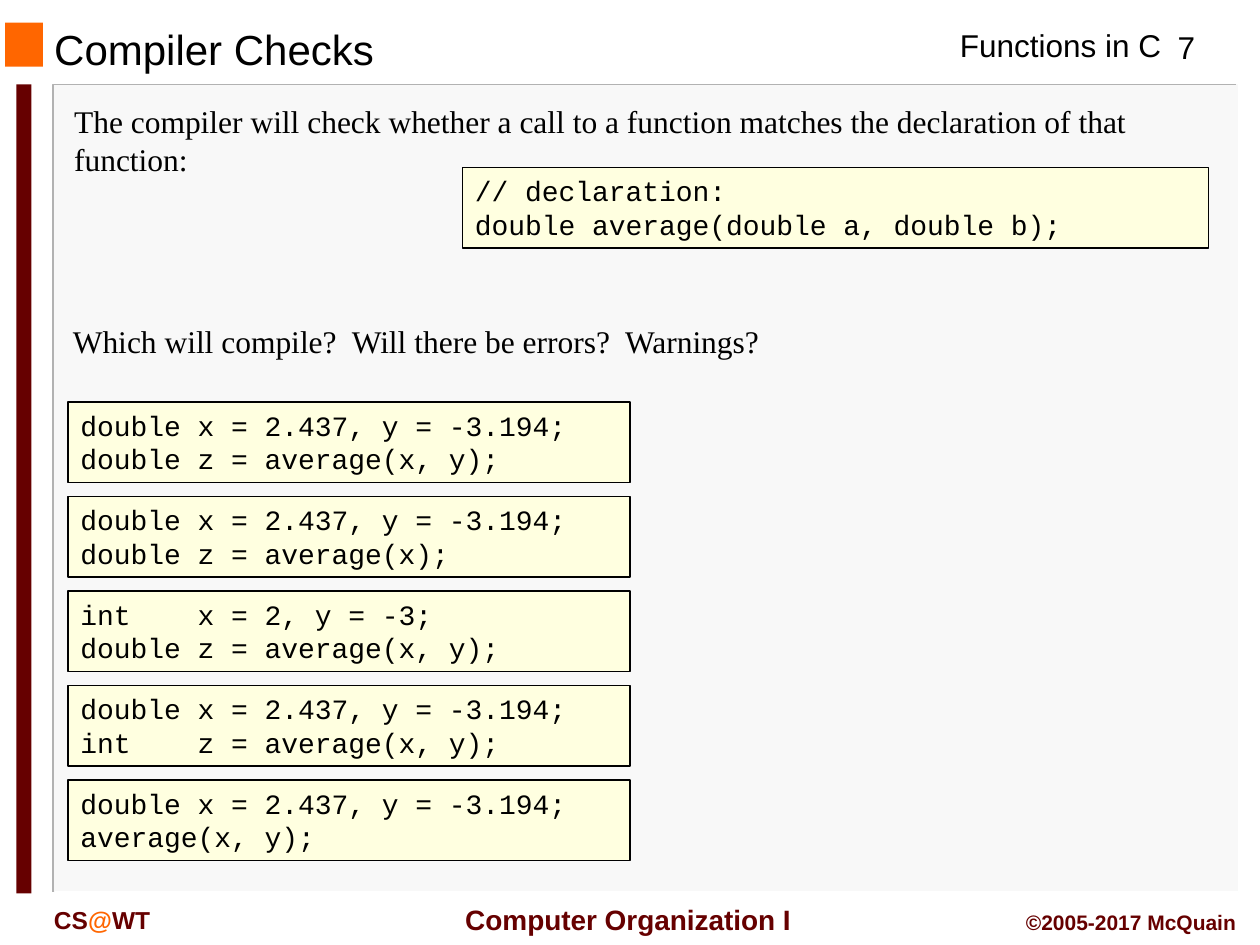
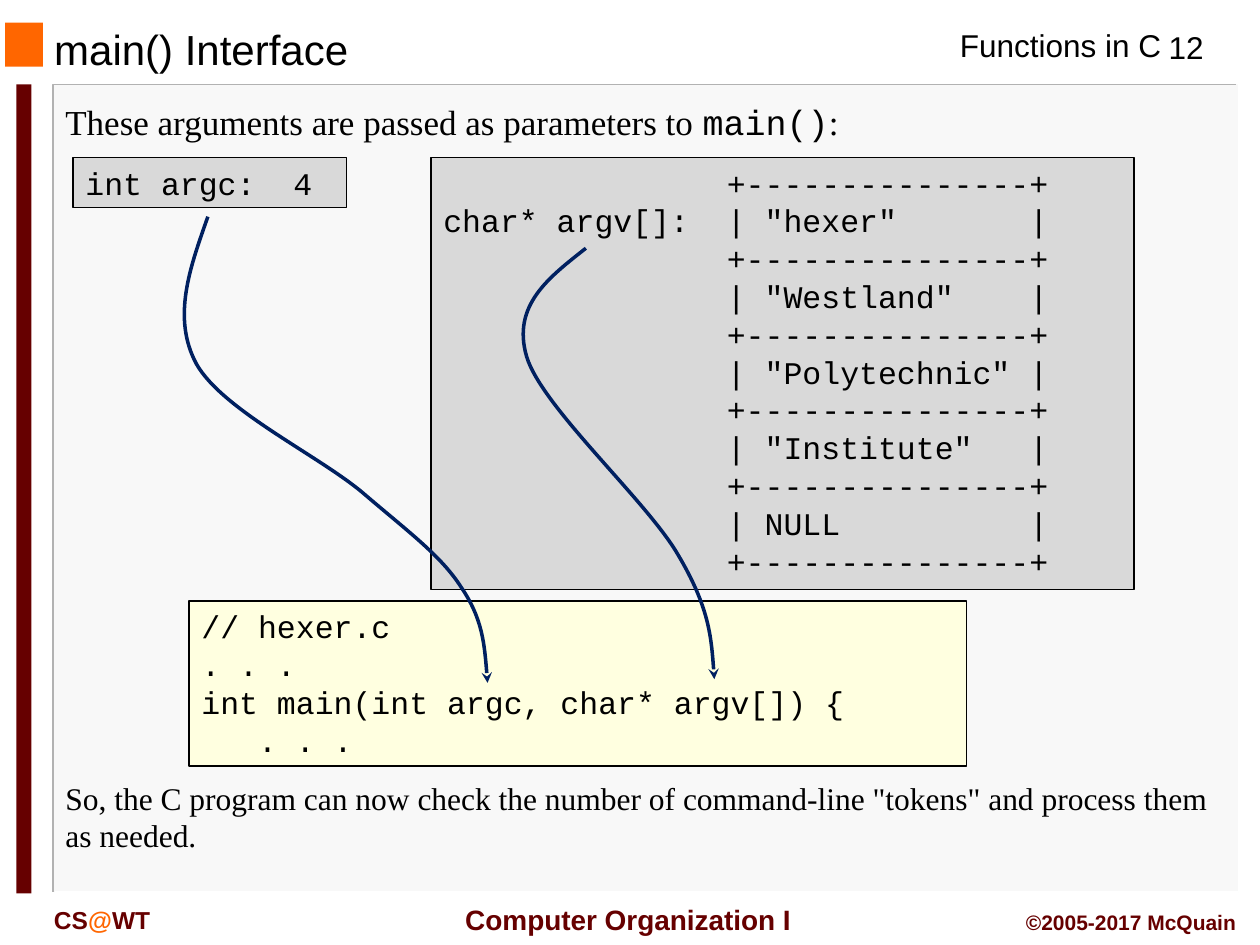
from pptx import Presentation
from pptx.dml.color import RGBColor
from pptx.enum.shapes import MSO_SHAPE
from pptx.enum.text import MSO_ANCHOR as Anchor, MSO_AUTO_SIZE as AutoSize, PP_ALIGN as Align
from pptx.oxml.xmlchemy import OxmlElement
from pptx.util import Inches, Pt

BLACK = RGBColor(0x00, 0x00, 0x00)
WHITE = RGBColor(0xFF, 0xFF, 0xFF)
PANEL = RGBColor(0xF8, 0xF8, 0xF8)
PANEL_EDGE = RGBColor(0xB2, 0xB2, 0xB2)
ORANGE = RGBColor(0xFF, 0x66, 0x00)
MAROON = RGBColor(0x66, 0x00, 0x00)
CODE_YELLOW = RGBColor(0xFF, 0xFF, 0xE0)
DATA_GRAY = RGBColor(0xD9, 0xD9, 0xD9)
ARROW_NAVY = RGBColor(0x00, 0x20, 0x60)

SANS, SERIF, MONO = "Arial", "Times New Roman", "Courier New"
TITLE_ONLY = 5

HEADING = {"name": SANS, "size": Pt(24), "bold": False}
HEADER = {"name": SANS, "size": Pt(18)}
COURSE = {"name": SANS, "size": Pt(16), "bold": True}
DEPARTMENT = {"name": SANS, "size": Pt(14), "bold": True}
COPYRIGHT = {"name": SANS, "size": Pt(12), "bold": True}
PROSE = {"name": SERIF, "size": Pt(18)}
LEAD = {"name": SERIF, "size": Pt(20)}
LEAD_CODE = {"name": MONO, "size": Pt(20)}
CODE = {"name": MONO, "size": Pt(18)}
SMALL_CODE = {"name": MONO, "size": Pt(16)}


def apply_format(target, values):
    for key, value in values.items():
        setattr(target, key, value)


def place(left, top, width, height):
    return [Inches(n) for n in (left, top, width, height)]


def write_runs(paragraph, runs, align=Align.LEFT):
    paragraph.alignment = align
    for text, style, color in runs:
        run = paragraph.add_run()
        run.text = text
        apply_format(run.font, style)
        run.font.color.rgb = color


def add_label(slide, box, runs, align=Align.LEFT, **frame_format):
    frame = slide.shapes.add_textbox(*place(*box)).text_frame
    apply_format(frame, {"word_wrap": True, **frame_format})
    write_runs(frame.paragraphs[0], runs, align)


def add_block(slide, box, fill):
    block = slide.shapes.add_shape(MSO_SHAPE.RECTANGLE, *place(*box))
    block.shadow.inherit = False
    block.fill.solid()
    block.fill.fore_color.rgb = fill
    block.line.fill.background()
    return block


def add_code(slide, box, lines, style=CODE, fill=CODE_YELLOW):
    block = add_block(slide, box, fill)
    block.line.color.rgb = BLACK
    block.line.width = Pt(0.75)
    frame = block.text_frame
    apply_format(frame, {"word_wrap": True, "vertical_anchor": Anchor.TOP})
    for index, line in enumerate(lines):
        paragraph = frame.add_paragraph() if index else frame.paragraphs[0]
        write_runs(paragraph, [(line, style, BLACK)])


def add_polyline(slide, points, color, width):
    start, *rest = [(Inches(x), Inches(y)) for x, y in points]
    builder = slide.shapes.build_freeform(*start)
    builder.add_line_segments(rest, close=False)
    outline = builder.convert_to_shape()
    outline.shadow.inherit = False
    outline.fill.background()
    outline.line.color.rgb = color
    outline.line.width = Pt(width)
    return outline


def add_curved_arrow(slide, points):
    arrow = add_polyline(slide, points, ARROW_NAVY, 2)
    segments = arrow.element.xpath(".//a:lnTo")
    for first in range(0, len(segments), 3):
        curve = OxmlElement("a:cubicBezTo")
        segments[first].addprevious(curve)
        for segment in segments[first:first + 3]:
            curve.append(segment[0])
            segment.getparent().remove(segment)
    head = OxmlElement("a:tailEnd")
    head.set("type", "stealth")
    arrow.element.xpath(".//a:ln")[0].append(head)


def add_framed_slide(deck, heading, number):
    slide = deck.slides.add_slide(deck.slide_layouts[TITLE_ONLY])
    title = slide.shapes.title
    position = place(0.33, 0.19, 7.08, 0.39)
    apply_format(title, dict(zip(("left", "top", "width", "height"), position)))
    apply_format(title.text_frame, {"auto_size": AutoSize.NONE, "word_wrap": True,
                                    "vertical_anchor": Anchor.MIDDLE})
    write_runs(title.text_frame.paragraphs[0], [(heading, HEADING, BLACK)])

    add_block(slide, (0.43, 0.67, 9.4, 6.41), PANEL)
    add_polyline(slide, [(9.81, 0.67), (0.42, 0.67), (0.42, 7.08)], PANEL_EDGE, 1)
    add_polyline(slide, [(9.83, 0.67), (9.83, 7.08), (0.44, 7.08)], WHITE, 1)
    add_block(slide, (0.04, 0.18, 0.3, 0.35), ORANGE)
    add_block(slide, (0.13, 0.67, 0.12, 6.42), MAROON)

    add_label(slide, (7.52, 0.16, 1.82, 0.4), [("Functions in C", HEADER, BLACK)],
              word_wrap=False)
    add_label(slide, (9.08, 0.17, 0.67, 0.4), [(number, HEADER, BLACK)], Align.CENTER)
    add_label(slide, (3.5, 7.11, 2.91, 0.37),
              [(" Computer Organization I", COURSE, MAROON)], Align.CENTER,
              word_wrap=False, vertical_anchor=Anchor.MIDDLE)
    add_label(slide, (0.33, 7.13, 1.5, 0.33),
              [("CS", DEPARTMENT, MAROON), ("@", DEPARTMENT, ORANGE),
               ("WT", DEPARTMENT, MAROON)])
    add_label(slide, (7.83, 7.17, 2.08, 0.3),
              [("©2005-2017 McQuain", COPYRIGHT, MAROON)], Align.RIGHT)
    return slide


def argv_diagram(tokens):
    border = " " * 15 + "+" + "-" * 15 + "+"
    lines = [border]
    for index, token in enumerate(tokens):
        label = "" if index else "char* argv[]:"
        lines += [f"{label:<15}| {token:<14}|", border]
    return lines


def build_compiler_checks(deck):
    slide = add_framed_slide(deck, "Compiler Checks", "7")
    add_label(slide, (0.49, 0.76, 9.27, 0.71),
              [("The compiler will check whether a call to a function matches "
                "the declaration of that function:", PROSE, BLACK)])
    add_code(slide, (3.67, 1.33, 5.92, 0.64),
             ["// declaration:", "double average(double a, double b);"], SMALL_CODE)
    add_label(slide, (0.48, 2.51, 6.1, 0.4),
              [("Which will compile?  Will there be errors?  Warnings?", PROSE, BLACK)])

    doubles = "double x = 2.437, y = -3.194;"
    calls = [
        (doubles, "double z = average(x, y);"),
        (doubles, "double z = average(x);"),
        ("int    x = 2, y = -3;", "double z = average(x, y);"),
        (doubles, "int    z = average(x, y);"),
        (doubles, "average(x, y);"),
    ]
    for row, call in enumerate(calls):
        add_code(slide, (0.54, 3.19 + 0.75 * row, 4.46, 0.64), call, SMALL_CODE)


def build_main_interface(deck):
    slide = add_framed_slide(deck, "main() Interface", "12")
    tokens = ['"hexer"', '"Westland"', '"Polytechnic"', '"Institute"', "NULL"]
    add_code(slide, (3.42, 1.25, 5.58, 3.43), argv_diagram(tokens), fill=DATA_GRAY)
    add_label(slide, (0.42, 0.75, 9.42, 0.44),
              [("These arguments are passed as parameters to ", LEAD, BLACK),
               ("main()", LEAD_CODE, BLACK), (":", LEAD, BLACK)])
    add_label(slide, (0.42, 6.13, 9.42, 0.71),
              [('So, the C program can now check the number of command-line "tokens" '
                "and process them as needed.", PROSE, BLACK)])
    add_code(slide, (1.5, 4.77, 6.17, 1.31),
             ["// hexer.c", ". . .", "int main(int argc, char* argv[]) {", "   . . ."])
    add_code(slide, (0.58, 1.25, 2.17, 0.4), ["int argc:  4"], fill=DATA_GRAY)

    argc_route = [(1.65, 1.72), (1.51, 2.12), (1.36, 2.52), (1.56, 2.89),
                  (1.77, 3.26), (2.54, 3.62), (2.89, 3.92),
                  (3.24, 4.22), (3.5, 4.41), (3.66, 4.66),
                  (3.83, 4.91), (3.85, 5.16), (3.87, 5.42)]
    argv_route = [(4.65, 1.97), (4.36, 2.2), (4.06, 2.42), (4.18, 2.83),
                  (4.3, 3.23), (5.13, 3.97), (5.38, 4.4),
                  (5.63, 4.82), (5.65, 5.11), (5.67, 5.39)]
    for route in (argc_route, argv_route):
        add_curved_arrow(slide, route)


def main():
    deck = Presentation()
    apply_format(deck, {"slide_width": Inches(10), "slide_height": Inches(7.5)})
    build_compiler_checks(deck)
    build_main_interface(deck)
    deck.save("out.pptx")


if __name__ == "__main__":
    main()
